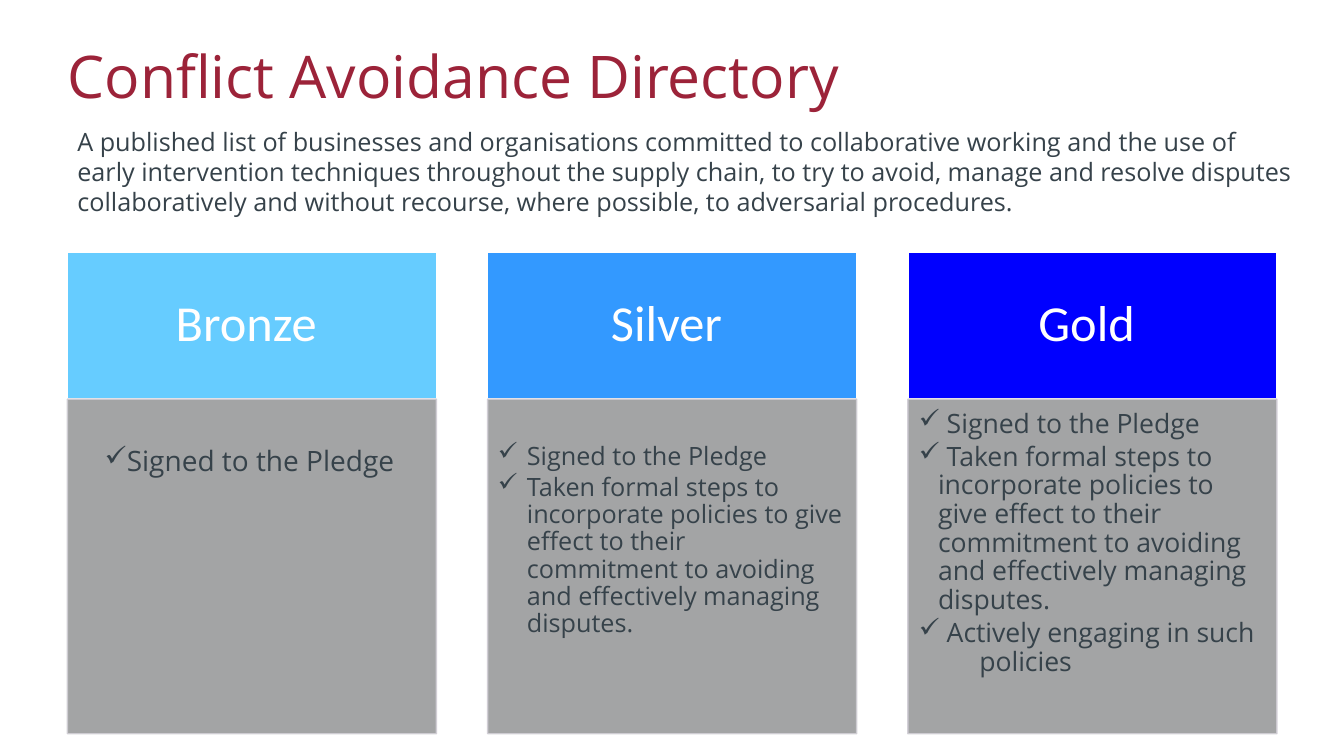
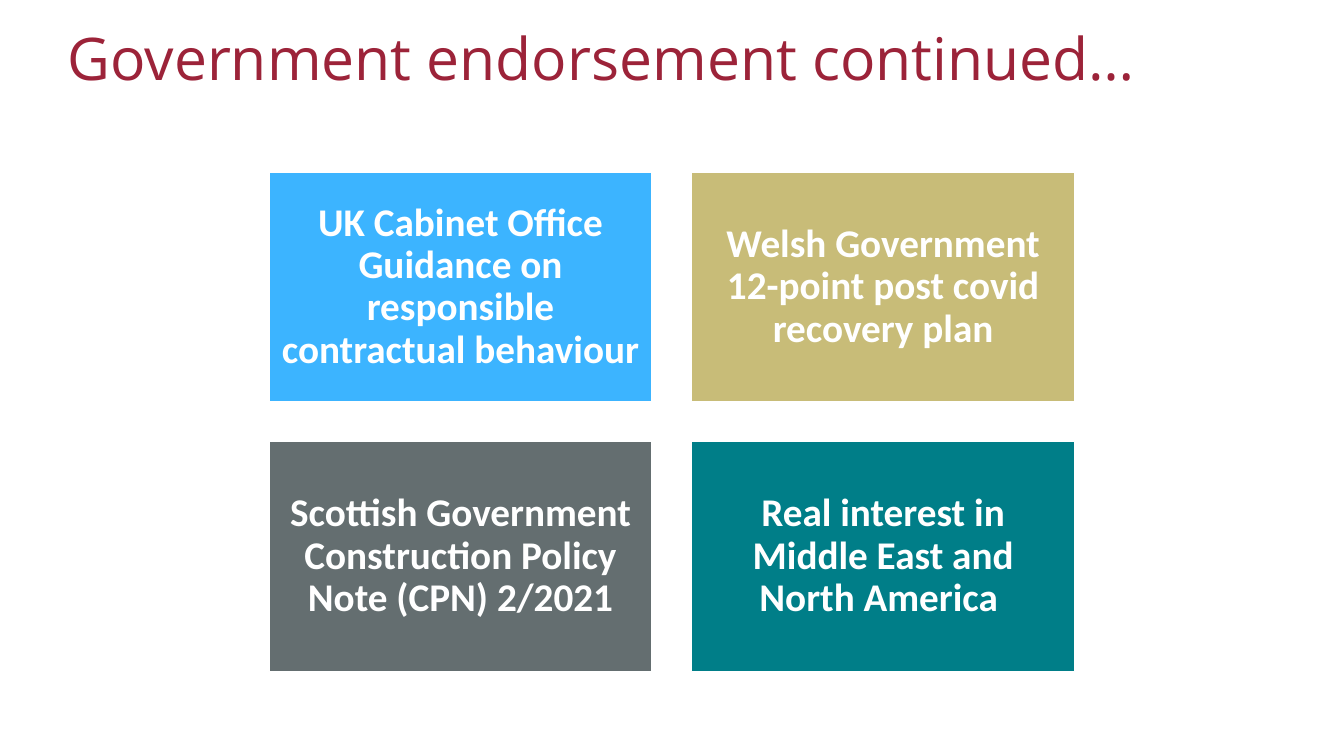
from pptx import Presentation
from pptx.dml.color import RGBColor
from pptx.enum.shapes import MSO_SHAPE as Kind
from pptx.enum.text import MSO_ANCHOR as Anchor, MSO_AUTO_SIZE as Auto, PP_ALIGN as Align
from pptx.oxml.ns import qn
from pptx.util import Cm, Pt
from lxml.etree import SubElement as Sub

# Shared style
SANS, PLAIN = "Open Sans", "Calibri"
RED, INK, WHITE = "9C2339", "36424A", "FFFFFF"
GREY, EDGE = "9A9B9C", "D0CDD4"
LEFT = 1.7

# Directory levels: name, colour, text size, top and left insets, list items.
# An item is its text, left margin, first line indent and bullet.
STEPS = ("Taken formal steps to incorporate policies to give effect to their "
         "commitment to avoiding and effectively managing disputes.")
LEVELS = [
    ("Bronze ", "66CCFF", 20, 1.22, 0.3, [
        ("Signed to the Pledge", 0.64, 0, "✓")]),
    ("Silver ", "3399FF", 18, 1.12, 0.26, [
        ("Signed to the Pledge", 0.73, -0.73, "✓"),
        (STEPS, 0.73, -0.73, "✓")]),
    ("Gold ", "0000FF", 19, 0.28, 0.28, [
        (" Signed to the Pledge", 0.48, -0.48, "✓"),
        (" " + STEPS, 0.48, -0.48, "✓"),
        (" Actively engaging in such", 0.48, -0.48, "✓"),
        ("policies", 1.52, 0, None)]),
]
INTRO = ("A published list of businesses and organisations committed to "
         "collaborative working and the use of early intervention techniques "
         "throughout the supply chain, to try to avoid, manage and resolve "
         "disputes collaboratively and without recourse, where possible, to "
         "adversarial procedures.")
BACKERS = [
    ("UK Cabinet Office Guidance on responsible contractual behaviour", "3CB4FF"),
    ("Welsh Government 12-point post covid recovery plan", "C8BC78"),
    ("Scottish Government Construction Policy Note (CPN) 2/2021", "646E70"),
    ("Real interest in Middle East and North America ", "007E88"),
]


def paint(part, color):
    """Give a fill one solid colour."""
    part.solid()
    part.fore_color.rgb = RGBColor.from_string(color)


def style(par, size, color, face, bold=False, align=Align.LEFT, lines=0.9):
    font = par.font
    font.size, font.name, font.bold = Pt(size), face, bold
    font.color.rgb = RGBColor.from_string(color)
    par.alignment, par.line_spacing = align, lines


def inset(frame, left, top, right, bottom):
    frame.margin_left, frame.margin_top = Cm(left), Cm(top)
    frame.margin_right, frame.margin_bottom = Cm(right), Cm(bottom)


def box(slide, x, y, w, h, color, edge=WHITE):
    shape = slide.shapes.add_shape(Kind.RECTANGLE, Cm(x), Cm(y), Cm(w), Cm(h))
    shape.shadow.inherit = False
    paint(shape.fill, color)
    paint(shape.line.fill, edge)
    shape.line.width = Pt(1)
    shape.text_frame.word_wrap = True
    return shape


def fade(shape, share):
    """Make the fill and line of a shape partly clear."""
    for node in shape.element.spPr.iter(qn("a:srgbClr")):
        Sub(node, qn("a:alpha"), val=str(share * 1000))


def tile(slide, x, y, w, h, color, text, size, side, top, bold=False):
    """Coloured box with centred white text."""
    frame = box(slide, x, y, w, h, color).text_frame
    frame.vertical_anchor = Anchor.MIDDLE
    inset(frame, side, top, side, top)
    frame.text = text
    style(frame.paragraphs[0], size, WHITE, PLAIN, bold, Align.CENTER)


def panel(slide, x, y, w, h, size, top, left, items):
    """Grey box with a ticked list."""
    shape = box(slide, x, y, w, h, GREY, EDGE)
    fade(shape, 90)
    frame = shape.text_frame
    frame.vertical_anchor = Anchor.TOP
    inset(frame, left, top, left + 0.1, 0.42)
    for i, (text, margin, indent, mark) in enumerate(items):
        par = frame.paragraphs[0] if i == 0 else frame.add_paragraph()
        par.text = text
        style(par, size, INK, SANS)
        if i and mark:
            par.space_before = Pt(size * 0.15)
        props = par._p.get_or_add_pPr()
        props.set("marL", str(Cm(margin)))
        props.set("indent", str(Cm(indent)))
        if mark:
            Sub(props, qn("a:buChar"), char=mark)
            # Bullets come before the font defaults in the schema
            props.append(props.find(qn("a:defRPr")))


def page(deck, text, top):
    """Slide with the shared title."""
    slide = deck.slides.add_slide(deck.slide_layouts[5])
    title = slide.shapes.title
    title.left, title.top = Cm(LEFT), Cm(top)
    title.width, title.height = Cm(30.48), Cm(2.84)
    frame = title.text_frame
    frame.text = text
    frame.auto_size, frame.word_wrap = Auto.NONE, True
    frame.vertical_anchor = Anchor.TOP
    inset(frame, 0, 0, 0, 0)
    style(frame.paragraphs[0], 42, RED, SANS)
    return slide


def levels(deck):
    slide = page(deck, "Conflict Avoidance Directory", 1.19)
    wide, step, top, head = 9.3, 10.59, 6.35, 3.71
    for i, (name, color, size, drop, left, items) in enumerate(LEVELS):
        x = LEFT + i * step
        tile(slide, x, top, wide, head, color, name, 36, 0.71, 0.41)
        panel(slide, x, top + head, wide, 8.43, size, drop, left, items)
    # Introduction
    note = slide.shapes.add_textbox(Cm(LEFT), Cm(3.05), Cm(31.12), Cm(2.57))
    frame = note.text_frame
    frame.word_wrap = True
    frame.text = INTRO
    style(frame.paragraphs[0], 18, INK, SANS, lines=1.0)


def backers(deck):
    slide = page(deck, "Government endorsement continued…", 0.76)
    wide, high, gap = 9.65, 5.79, 1
    for i, (text, color) in enumerate(BACKERS):
        row, col = divmod(i, 2)
        x, y = 6.78 + col * (wide + gap), 4.34 + row * (high + gap)
        tile(slide, x, y, wide, high, color, text, 28, 0.3, 0.3, True)


def main():
    deck = Presentation()
    deck.slide_width, deck.slide_height = Cm(33.87), Cm(19.05)
    levels(deck)
    backers(deck)
    deck.save("out.pptx")


if __name__ == "__main__":
    main()
